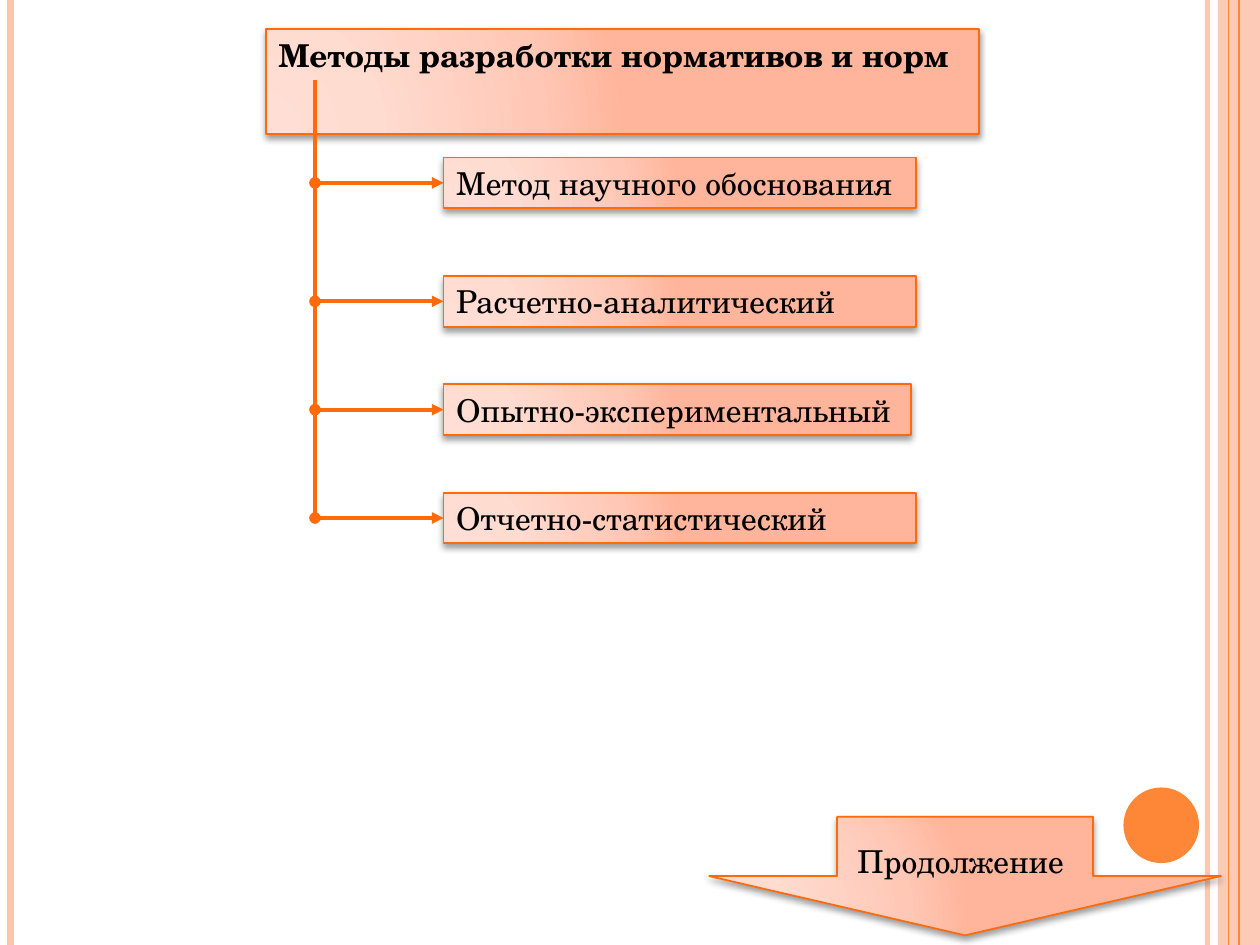
from dataclasses import dataclass

from lxml.etree import SubElement
from pptx import Presentation
from pptx.dml.color import RGBColor
from pptx.enum.shapes import MSO_CONNECTOR, MSO_SHAPE
from pptx.enum.text import MSO_ANCHOR, MSO_AUTO_SIZE, PP_ALIGN
from pptx.oxml import parse_xml
from pptx.oxml.ns import nsdecls, qn
from pptx.util import Pt


@dataclass(frozen=True)
class Theme:
    """Hold the colours, font and sizes of the slide."""
    font: str = "TeX Gyre Schola"
    size: float = 18
    ink: str = "000000"
    edge: str = "FF6B0A"
    band: str = "FEC3AE"
    dot: str = "FE8637"
    stops: tuple = ((0, "FFDED5"), (30, "FFDBD0"), (75, "FFC8B6"), (100, "FFB59B"))


LOOK = Theme()
ROW = 29


def rgb(code):
    """Turn a hex code into a colour."""
    return RGBColor.from_string(code)


def fade(fill, color, part):
    """Fill with a solid colour at the given percentage of opacity."""
    fill.solid()
    fill.fore_color.rgb = rgb(color)
    if part < 100:
        tint = fill._xPr.find(".//" + qn("a:srgbClr"))
        SubElement(tint, qn("a:alpha"), val=str(part * 1000))


def paint(shape):
    """Give a shape the peach gradient, orange edge and soft shadow."""
    stops = "".join(
        f'<a:gs pos="{at * 1000}"><a:srgbClr val="{color}"/></a:gs>'
        for at, color in LOOK.stops)
    shade = parse_xml(
        f'<a:gradFill {nsdecls("a")} rotWithShape="1"><a:gsLst>{stops}</a:gsLst>'
        '<a:path path="circle"><a:fillToRect l="5000" t="100000" r="120000" b="10000"/>'
        '</a:path></a:gradFill>')
    shape.fill.solid()
    props = shape._element.spPr
    props.replace(props.find(qn("a:solidFill")), shade)
    shape.line.color.rgb = rgb(LOOK.edge)
    shape.line.width = Pt(1)
    shape.shadow.inherit = False
    props.find(qn("a:effectLst")).append(parse_xml(
        f'<a:outerShdw {nsdecls("a")} blurRad="{Pt(4)}" dist="{Pt(2)}" dir="5400000" '
        'rotWithShape="0"><a:srgbClr val="000000"><a:alpha val="40000"/></a:srgbClr>'
        '</a:outerShdw>'))


def write(shape, text, bold=False, align=PP_ALIGN.LEFT, anchor=MSO_ANCHOR.TOP,
          size=MSO_AUTO_SIZE.SHAPE_TO_FIT_TEXT):
    """Set the text of a shape and format it."""
    frame = shape.text_frame
    frame.text = text
    frame.word_wrap = True
    frame.auto_size = size
    frame.vertical_anchor = anchor
    para = frame.paragraphs[0]
    para.alignment = align
    font = para.runs[0].font
    font.name, font.size, font.bold = LOOK.font, Pt(LOOK.size), bold
    font.color.rgb = rgb(LOOK.ink)


def place(shape, left, top, width, height):
    """Move and size a shape."""
    shape.left, shape.top = Pt(left), Pt(top)
    shape.width, shape.height = Pt(width), Pt(height)


def draw(slide, kind, left, top, width, height):
    """Add a preset shape."""
    return slide.shapes.add_shape(kind, Pt(left), Pt(top), Pt(width), Pt(height))


def rule(slide, start, end, color, width, part=100):
    """Add a straight line without a shadow."""
    line = slide.shapes.add_connector(
        MSO_CONNECTOR.STRAIGHT, *(Pt(n) for n in (*start, *end)))
    fade(line.line.fill, color, part)
    line.line.width = Pt(width)
    SubElement(line._element.spPr, qn("a:effectLst"))
    return line


def plain(slide, kind, box, color, part=100):
    """Add a flat shape without an edge."""
    shape = draw(slide, kind, *box)
    fade(shape.fill, color, part)
    shape.line.fill.background()
    shape.shadow.inherit = False


def frame(slide, left, top, width, height):
    """Draw the side stripes and the corner dot."""
    right, base = left + width, top + height
    plain(slide, MSO_SHAPE.RECTANGLE, (right - 24, top, 24, height), LOOK.band, 87)
    for x, color, size, part in (
            (right - 30, LOOK.band, 3, 93), (left + 6, LOOK.band, 4.5, 100),
            (right - 12, LOOK.dot, 1.5, 100), (right - 18, LOOK.dot, 0.75, 100)):
        rule(slide, (x, top), (x, base), color, size, part)
    plain(slide, MSO_SHAPE.OVAL, (right - 78, base - 90, 43.2, 43.2), LOOK.dot)


def head(slide, left, top, width):
    """Place the title box."""
    title = slide.shapes.title
    place(title, left, top, width, ROW)
    paint(title)
    write(title, "Методы разработки нормативов и норм", bold=True)


def tree(slide, left, top, width, rows):
    """Draw the trunk and one branch with a box for each method."""
    inset = 73.5
    last = top + rows[-1][0] + ROW / 2
    rule(slide, (left, top), (left, last), LOOK.edge, 2.25)
    for drop, text, trim in rows:
        y = top + drop
        box = draw(slide, MSO_SHAPE.RECTANGLE, left + inset, y,
                   width - inset - trim, ROW)
        paint(box)
        write(box, text)
        mid = y + ROW / 2
        twig = rule(slide, (left, mid), (left + inset, mid), LOOK.edge, 2.25)
        twig.end_connect(box, 1)
        edge = twig.line._get_or_add_ln()
        SubElement(edge, qn("a:headEnd"), type="oval")
        SubElement(edge, qn("a:tailEnd"), type="triangle")


def more(slide, left, top, width, height):
    """Draw the arrow that leads to the next slide."""
    arrow = draw(slide, MSO_SHAPE.DOWN_ARROW, left, top, width, height)
    paint(arrow)
    write(arrow, "Продолжение ", align=PP_ALIGN.CENTER,
          anchor=MSO_ANCHOR.MIDDLE, size=MSO_AUTO_SIZE.NONE)


def main():
    """Build and save the slide."""
    deck = Presentation()
    deck.slide_width, deck.slide_height = Pt(720), Pt(540)
    slide = deck.slides.add_slide(deck.slide_layouts[5])
    frame(slide, 0, 0, 720, 540)
    head(slide, 152, 16.7, 407.5)
    tree(slide, 180, 45.7, 343.5, (
        (44.3, "Метод научного обоснования", 0),
        (112, "Расчетно-аналитический", 0),
        (173.9, "Опытно-экспериментальный", 3),
        (235.8, "Отчетно-статистический", 0)))
    more(slide, 405.2, 466.8, 292.5, 67.7)
    deck.save("out.pptx")


if __name__ == "__main__":
    main()
